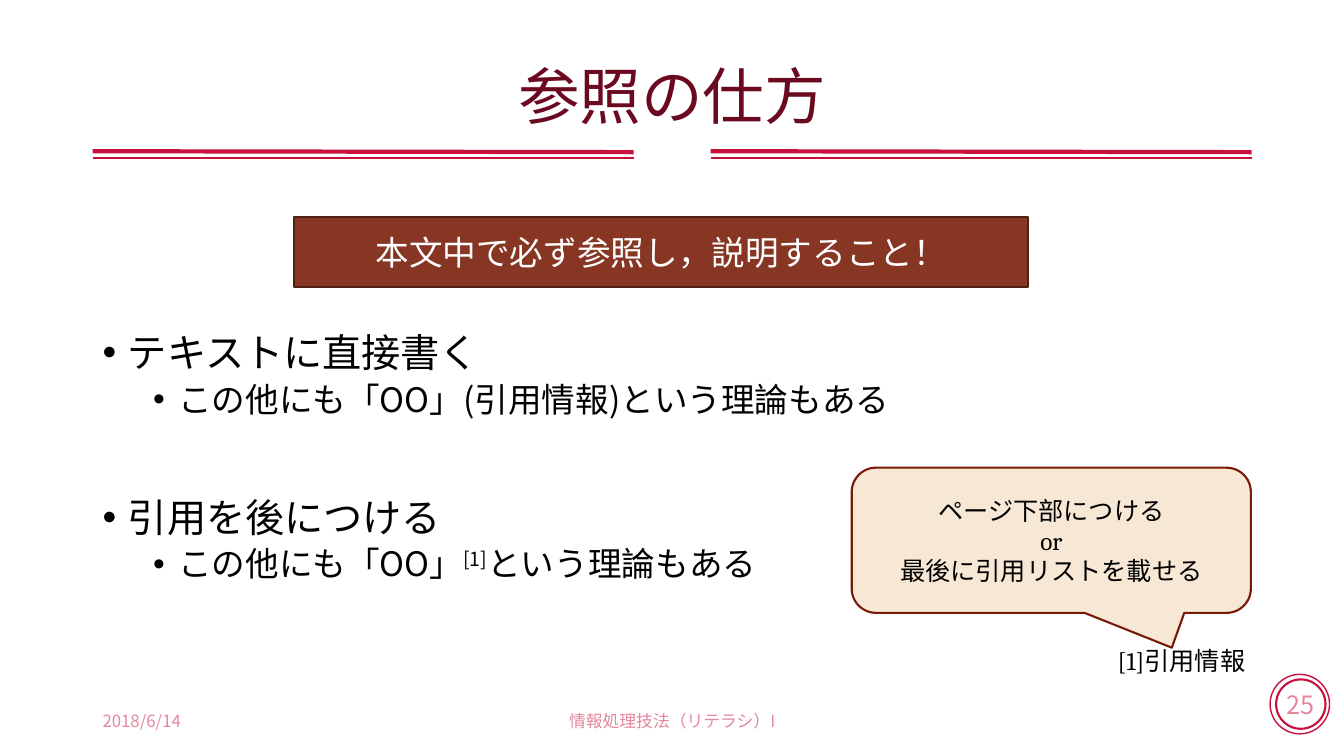
import pptx
import pptx.util
import pptx.dml.color
import pptx.enum.shapes
import pptx.enum.text
import pptx.oxml.ns
import lxml.etree

Pt = pptx.util.Pt
SHAPE = pptx.enum.shapes.MSO_SHAPE
ALIGN = pptx.enum.text.PP_ALIGN
ANCHOR = pptx.enum.text.MSO_ANCHOR
qn = pptx.oxml.ns.qn

SANS = "Noto Sans CJK JP"
SERIF = "Cambria"
COLORS = {
    "black": "000000",
    "white": "FFFFFF",
    "title": "6B0920",
    "accent": "C8103D",
    "banner": "873624",
    "banner_line": "4F2015",
    "callout": "F7E7D5",
    "callout_line": "781A07",
}


def rgb(name):
    return pptx.dml.color.RGBColor.from_string(COLORS[name])


def sub(parent, tag, **attrs):
    return lxml.etree.SubElement(parent, qn(tag), attrs)


def add_text(p, text, size=18, font=SANS, color="black", alpha=None,
             align=None, line=None, before=None, baseline=None):
    if align is not None:
        p.alignment = align
    if line is not None:
        p.line_spacing = line
    if before is not None:
        p.space_before = Pt(before)
    r = p.add_run()
    r.text = text
    r.font.size = Pt(size)
    r.font.color.rgb = rgb(color)
    r.font.name = font
    rpr = r.font._element
    sub(rpr, "a:ea", typeface=SANS)
    if alpha:
        sub(rpr.find(".//" + qn("a:srgbClr")), "a:alpha", val=str(alpha * 1000))
    if baseline:
        rpr.set("baseline", str(baseline * 1000))


def add_bullet(p, level):
    p.level = level
    ppr = p._p.get_or_add_pPr()
    ppr.set("marL", str(Pt((18, 54)[level])))
    ppr.set("indent", str(Pt(-18)))
    sub(ppr, "a:buFont", typeface="Arial")
    sub(ppr, "a:buChar", char="•")


def place(sp, x, y, w, h):
    sp.left, sp.top, sp.width, sp.height = Pt(x), Pt(y), Pt(w), Pt(h)


def set_frame(tf, anchor=ANCHOR.MIDDLE):
    tf.word_wrap = True
    tf.auto_size = pptx.enum.text.MSO_AUTO_SIZE.NONE
    tf.vertical_anchor = anchor


def add_box(s, x, y, w, h, lines, anchor=ANCHOR.MIDDLE, **fmt):
    sp = s.shapes.add_textbox(Pt(x), Pt(y), Pt(w), Pt(h))
    fill_lines(sp, lines, anchor, **fmt)


def fill_lines(sp, lines, anchor=ANCHOR.MIDDLE, **fmt):
    tf = sp.text_frame
    set_frame(tf, anchor)
    for i, text in enumerate(lines):
        p = tf.add_paragraph() if i else tf.paragraphs[0]
        add_text(p, text, **fmt)


def add_shape(s, kind, x, y, w, h, line, width, fill=None):
    sp = s.shapes.add_shape(kind, Pt(x), Pt(y), Pt(w), Pt(h))
    sp.shadow.inherit = False
    if fill:
        sp.fill.solid()
        sp.fill.fore_color.rgb = rgb(fill)
    else:
        sp.fill.background()
    sp.line.color.rgb = rgb(line)
    sp.line.width = Pt(width)
    return sp


def add_line(s, x1, y1, x2, y2, width):
    c = s.shapes.add_connector(pptx.enum.shapes.MSO_CONNECTOR.STRAIGHT,
                               Pt(x1), Pt(y1), Pt(x2), Pt(y2))
    c.line.color.rgb = rgb("accent")
    c.line.width = Pt(width)
    sub(c._element.spPr, "a:effectLst")


def add_page_number(s, text):
    add_shape(s, SHAPE.OVAL, 907.2, 481.7, 42.5, 42.5, "accent", 1)
    sp = add_shape(s, SHAPE.OVAL, 911.5, 485.3, 35.3, 35.3, "accent", 1.5)
    fill_lines(sp, [text], color="accent", alpha=50, align=ALIGN.CENTER)
    tf = sp.text_frame
    tf.margin_left = tf.margin_right = 0
    tf.word_wrap = False


def add_title(s, text):
    place(s.shapes.title, 66.2, 28.8, 828, 84.2)
    fill_lines(s.shapes.title, [text], size=44, color="title",
               align=ALIGN.CENTER, line=0.9)
    for x in (507.6, 66.2):
        add_line(s, x, 108, x + 386.4, 108.7, 3)
        add_line(s, x, 113, x + 386.4, 113, 1)


def add_body(s, items):
    sp = s.placeholders[1]
    place(sp, 66.2, 234.7, 828, 252)
    tf = sp.text_frame
    set_frame(tf, ANCHOR.TOP)
    for i, (level, before, runs) in enumerate(items):
        p = tf.add_paragraph() if i else tf.paragraphs[0]
        add_bullet(p, level)
        for text, baseline in runs:
            add_text(p, text, size=(28, 24)[level], align=ALIGN.LEFT,
                     line=0.9, before=before, baseline=baseline)


def main():
    prs = pptx.Presentation()
    prs.slide_width, prs.slide_height = Pt(960), Pt(540)
    s = prs.slides.add_slide(prs.slide_layouts[1])

    add_page_number(s, "25")
    add_title(s, "参照の仕方")
    add_body(s, [
        (0, 0, [("テキストに直接書く", None)]),
        (1, 5, [("この他にも「OO」(引用情報)という理論もある", None)]),
        (0, 56.5, [("引用を後につける", None)]),
        (1, 5, [("この他にも「OO」", None), ("[1]", 30),
                ("という理論もある", None)]),
    ])

    footer = dict(size=12, color="accent", alpha=50)
    add_box(s, 66.2, 500.4, 216, 28.8, ["2018/6/14"], **footer)
    add_box(s, 318.2, 500.4, 324, 28.8, ["情報処理技法（リテラシ）I"],
            align=ALIGN.CENTER, **footer)
    add_box(s, 791.3, 457.2, 108.7, 28.8, ["[1]引用情報"],
            anchor=ANCHOR.TOP, font=SERIF)

    callout = add_shape(s, SHAPE.ROUNDED_RECTANGULAR_CALLOUT, 608.4, 334.1,
                        285.1, 103.7, "callout_line", 1.5, "callout")
    for i, value in enumerate((0.302, 0.74, 0.167)):
        callout.adjustments[i] = value
    fill_lines(callout, ["ページ下部につける", "or", "最後に引用リストを載せる"],
               font=SERIF, align=ALIGN.CENTER)

    banner = add_shape(s, SHAPE.RECTANGLE, 210.2, 154.8, 524.2, 50.4,
                       "banner_line", 1.5, "banner")
    fill_lines(banner, ["本文中で必ず参照し，説明すること！"], size=24,
               font=SERIF, color="white", align=ALIGN.CENTER)

    prs.save("out.pptx")


if __name__ == "__main__":
    main()
